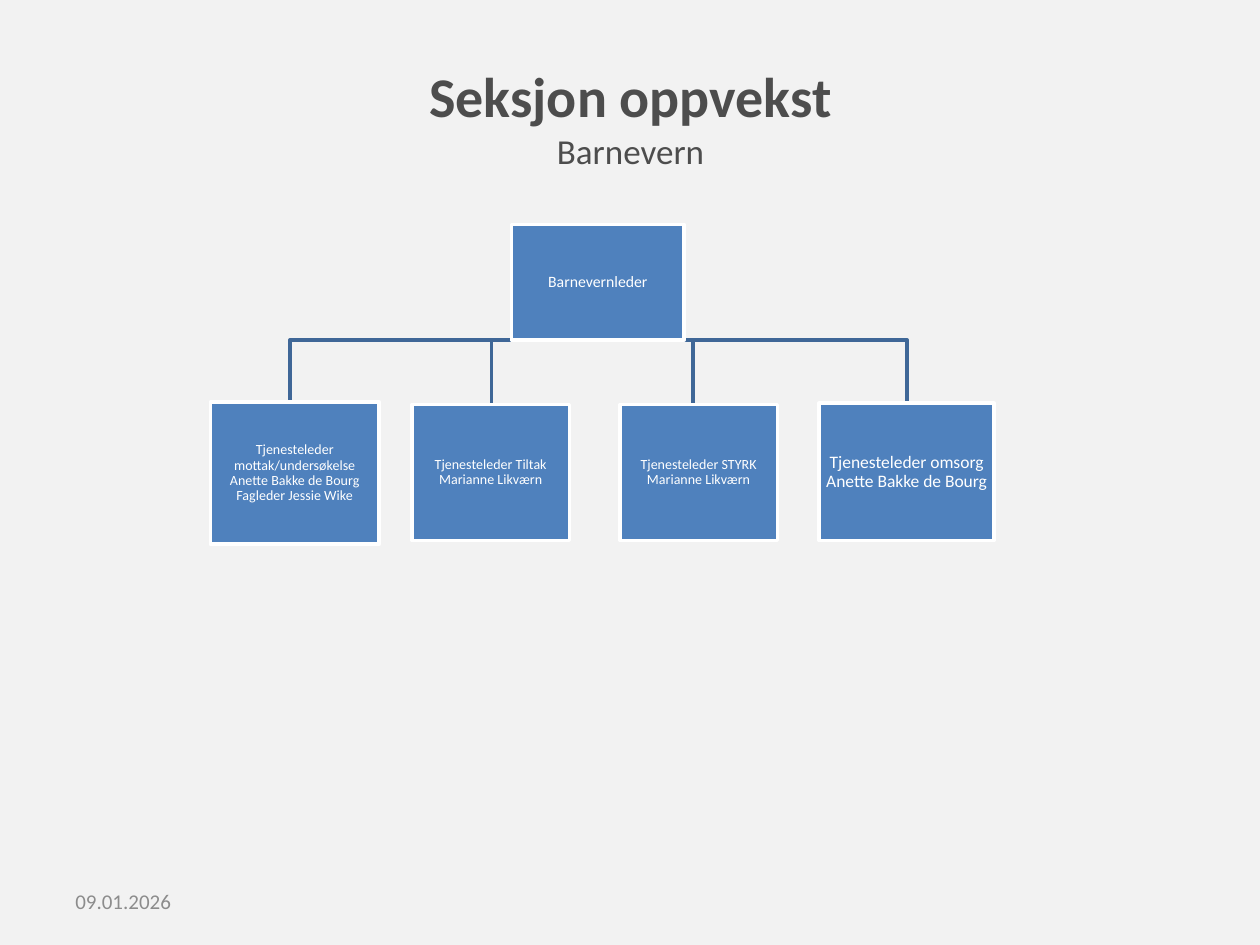
from pptx import Presentation, util as u
from pptx.dml.color import RGBColor
from pptx.enum import shapes, text

BACKGROUND = RGBColor(0xF2, 0xF2, 0xF2)
BOX_BLUE = RGBColor(0x4F, 0x81, 0xBD)
BRANCH_BLUE = RGBColor(0x3F, 0x67, 0x97)
WHITE = RGBColor(0xFF, 0xFF, 0xFF)
HEADING_GREY = RGBColor(0x4D, 0x4D, 0x4D)
DATE_GREY = RGBColor(0x8C, 0x8C, 0x8C)

deck = Presentation()
deck.slide_width, deck.slide_height = u.Inches(10), u.Inches(7.5)
COL = deck.slide_width // 100
ROW = deck.slide_height // 75
slide = deck.slides.add_slide(deck.slide_layouts[6])
slide.background.fill.solid()
slide.background.fill.fore_color.rgb = BACKGROUND


def place(left, top, width, height):
    return [u.Emu(round(n)) for n in (left * COL, top * ROW, width * COL, height * ROW)]


def write(frame, wording, sizes, color, align):
    frame.word_wrap = True
    frame.vertical_anchor = text.MSO_ANCHOR.MIDDLE
    paragraph = frame.paragraphs[0]
    paragraph.text = wording
    paragraph.alignment = align
    for run, size in zip(paragraph.runs, sizes):
        run.font.name = "Calibri"
        run.font.size = u.Pt(size)
        run.font.color.rgb = color
    return paragraph


heading = slide.shapes.add_textbox(*place(5.1, 3, 89.9, 12.5))
title = write(heading.text_frame, "Seksjon oppvekst\vBarnevern", (32, 20),
              HEADING_GREY, text.PP_ALIGN.CENTER)
title.runs[0].font.bold = True

leader = ("Barnevernleder", 9, (40.6, 17.8, 13.7, 9.2))
services = [
    ("Tjenesteleder mottak/undersøkelse\vAnette Bakke de Bourg\vFagleder Jessie Wike",
     8, (16.7, 31.9, 13.4, 11.3)),
    ("Tjenesteleder Tiltak\vMarianne Likværn", 8, (32.7, 32.1, 12.5, 10.8)),
    ("Tjenesteleder STYRK\vMarianne Likværn", 8, (49.2, 32.1, 12.5, 10.8)),
    ("Tjenesteleder omsorg\vAnette Bakke de Bourg", 10, (65, 32, 13.9, 10.9)),
]

left, top, width, height = leader[2]
trunk, bar = left + width / 2, top + height
for _, _, (left, top, width, _) in services:
    center = left + width / 2
    outline = slide.shapes.build_freeform(trunk, bar, scale=(COL, ROW))
    outline.add_line_segments([(center, bar), (center, top)], close=False)
    branch = outline.convert_to_shape()
    branch.shadow.inherit = False
    branch.fill.background()
    branch.line.color.rgb = BRANCH_BLUE
    branch.line.width = u.Pt(2)

for wording, size, area in [leader] + services:
    box = slide.shapes.add_shape(shapes.MSO_SHAPE.RECTANGLE, *place(*area))
    box.shadow.inherit = False
    box.fill.solid()
    box.fill.fore_color.rgb = BOX_BLUE
    box.line.color.rgb = WHITE
    box.line.width = u.Pt(2)
    frame = box.text_frame
    frame.margin_left = frame.margin_right = u.Inches(0.01)
    frame.margin_top = frame.margin_bottom = u.Inches(0.01)
    label = write(frame, wording, [size] * 3, WHITE, text.PP_ALIGN.CENTER)
    label.line_spacing = 0.9

date = slide.shapes.add_textbox(*place(5, 69.5, 23.3, 4))
write(date.text_frame, "09.01.2026", [12], DATE_GREY, text.PP_ALIGN.LEFT)

deck.save("out.pptx")
